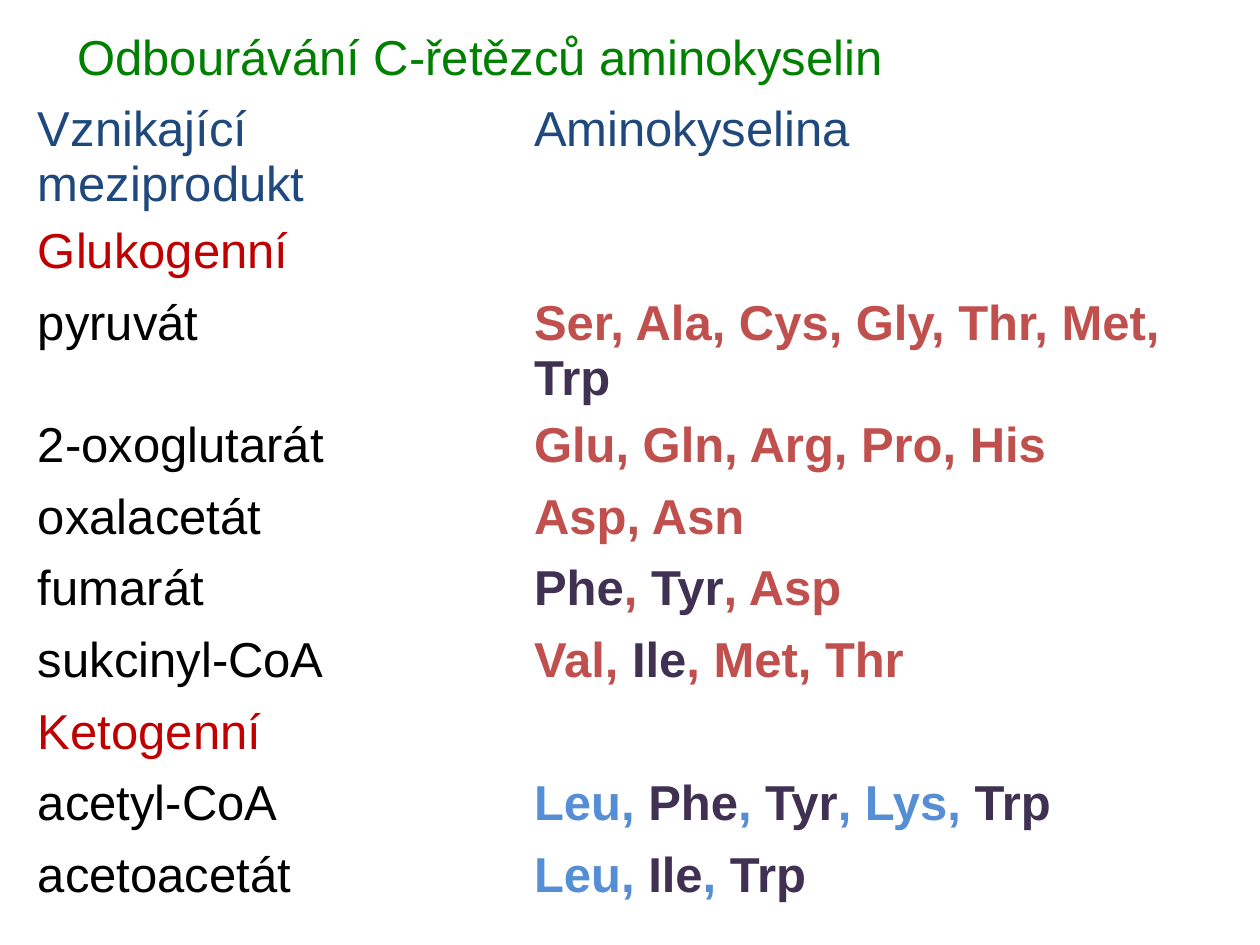
import itertools
import pptx
import pptx.dml.color
import pptx.enum.text
import pptx.util

Pt = pptx.util.Pt

# Content
TITLE = "Odbourávání C-řetězců aminokyselin"
HEADER = ("Vznikající meziprodukt", "Aminokyselina")
GROUPS = [
    ("Glukogenní", "C0504D", [
        ("pyruvát", ["Ser", "Ala", "Cys", "Gly", "Thr", "Met", "Trp"]),
        ("2-oxoglutarát", ["Glu", "Gln", "Arg", "Pro", "His"]),
        ("oxalacetát", ["Asp", "Asn"]),
        ("fumarát", ["Phe", "Tyr", "Asp"]),
        ("sukcinyl-CoA", ["Val", "Ile", "Met", "Thr"]),
    ]),
    ("Ketogenní", "558ED5", [
        ("acetyl-CoA", ["Leu", "Phe", "Tyr", "Lys", "Trp"]),
        ("acetoacetát", ["Leu", "Ile", "Trp"]),
    ]),
]
# Amino acids that are both glucogenic and ketogenic
MIXED = {"Phe", "Tyr", "Trp", "Ile"}
GREEN, NAVY, RED, BLACK, PURPLE = "008000", "1F497D", "C00000", "000000", "403152"
COLUMNS = (283.5, 408.5)
ROW_HEIGHT = 41


def add_text(tf, text, color, size=28, bold=False):
    r = tf.paragraphs[0].add_run()
    r.text = text
    r.font.name = "Arial"
    r.font.size = Pt(size)
    r.font.bold = bold
    r.font.color.rgb = pptx.dml.color.RGBColor.from_string(color)


def add_acids(tf, acids, color):
    """Write the list, joining neighbouring pieces of one colour into one run."""
    pieces = []
    for i, acid in enumerate(acids):
        if i:
            pieces.append((", ", color))
        pieces.append((acid, PURPLE if acid in MIXED else color))
    for run_color, run in itertools.groupby(pieces, key=lambda piece: piece[1]):
        add_text(tf, "".join(text for text, _ in run), run_color, bold=True)


prs = pptx.Presentation()
prs.slide_width, prs.slide_height = Pt(720), Pt(540)
s = prs.slides.add_slide(prs.slide_layouts[5])

# Title
title = s.shapes.title
title.left, title.top, title.width, title.height = Pt(37), Pt(9.5), Pt(648), Pt(45)
tf = title.text_frame
tf.auto_size = pptx.enum.text.MSO_AUTO_SIZE.NONE
tf.vertical_anchor = pptx.enum.text.MSO_ANCHOR.MIDDLE
tf.paragraphs[0].alignment = pptx.enum.text.PP_ALIGN.LEFT
add_text(tf, TITLE, GREEN)

# Table
n_rows = 1 + sum(1 + len(rows) for _, _, rows in GROUPS)
table = s.shapes.add_table(n_rows, len(COLUMNS), Pt(14.5), Pt(55),
                           Pt(sum(COLUMNS)), Pt(n_rows * ROW_HEIGHT)).table
table.first_row = table.horz_banding = False
for column, width in zip(table.columns, COLUMNS):
    column.width = Pt(width)
for row in table.rows:
    row.height = Pt(ROW_HEIGHT)
for cell in table.iter_cells():
    cell.fill.background()

# Cell text
for col, text in enumerate(HEADER):
    add_text(table.cell(0, col).text_frame, text, NAVY)
row_numbers = itertools.count(1)
for group, color, rows in GROUPS:
    add_text(table.cell(next(row_numbers), 0).text_frame, group, RED)
    for product, acids in rows:
        i = next(row_numbers)
        add_text(table.cell(i, 0).text_frame, product, BLACK)
        add_acids(table.cell(i, 1).text_frame, acids, color)

prs.save("out.pptx")
